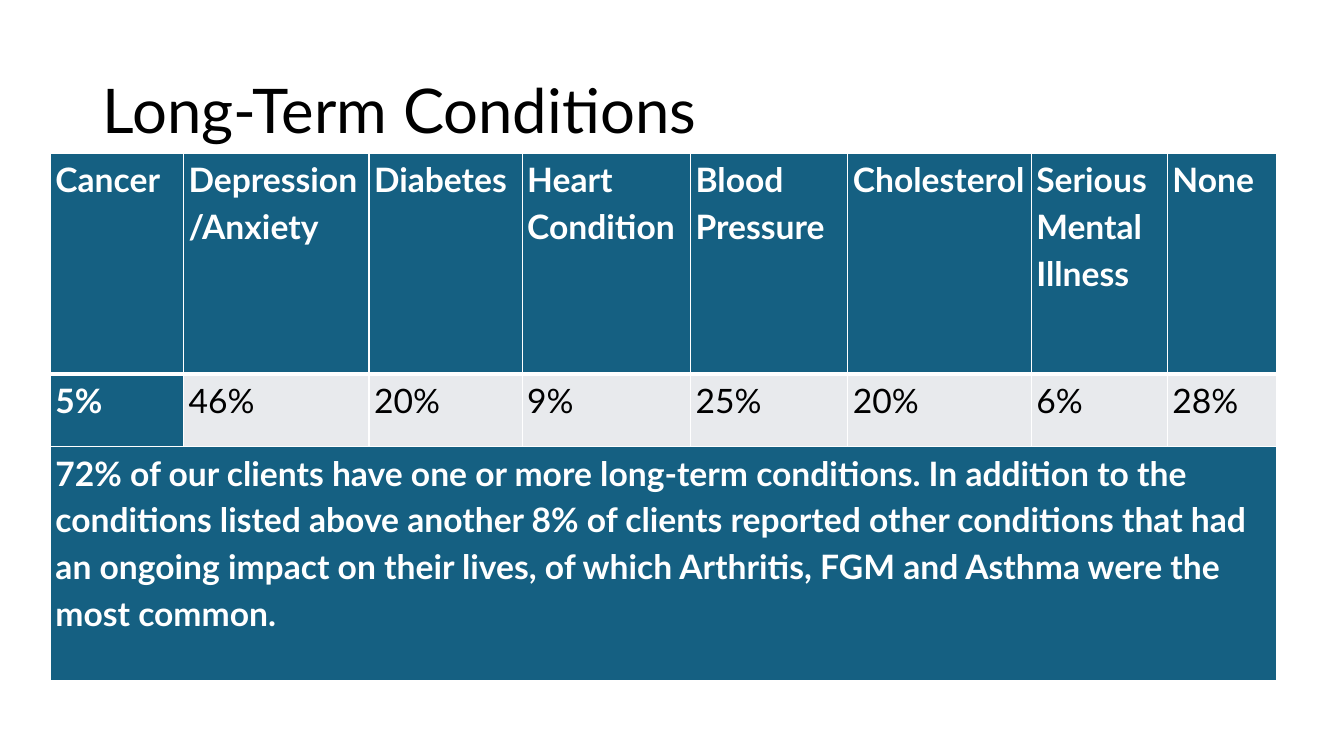
from dataclasses import dataclass

from lxml.etree import SubElement
from pptx import Presentation
from pptx.dml.color import RGBColor
from pptx.enum.text import MSO_ANCHOR, PP_ALIGN
from pptx.oxml.ns import qn
from pptx.table import Table, _Cell
from pptx.text.text import TextFrame
from pptx.util import Pt

SCALE = 9144  # EMU in one px, at 100 px to the inch


@dataclass(frozen=True)
class Theme:
    face: str = "Lato"
    blue: str = "156082"
    grey: str = "E8EAED"
    white: str = "FFFFFF"
    black: str = "000000"
    head: int = 44
    body: int = 24
    thin: int = 1
    thick: int = 3


@dataclass(frozen=True)
class Style:
    size: int
    color: str
    bold: bool
    lines: float
    after: int = 0


@dataclass(frozen=True)
class Item:
    label: str
    share: str
    width: int


THEME = Theme()
TITLE = Style(THEME.head, THEME.black, False, 0.9)
STRONG = Style(THEME.body, THEME.white, True, 1.16, 8)
PLAIN = Style(THEME.body, THEME.black, False, 1.16, 8)

ITEMS = [
    Item("Cancer", "5%", 132),
    Item("Depression/Anxiety", "46%", 184),
    Item("Diabetes", "20%", 152),
    Item("Heart Condition", "9%", 167),
    Item("Blood Pressure", "25%", 156),
    Item("Cholesterol", "20%", 182),
    Item("Serious Mental Illness", "6%", 135),
    Item("None", "28%", 108),
]
ROWS = [219, 72, 232]
NOTE = (
    "72% of our clients have one or more long-term conditions. In addition to the "
    "conditions listed above another 8% of clients reported other conditions that had "
    "an ongoing impact on their lives, of which Arthritis, FGM and Asthma were the "
    "most common."
)


def px(count: int) -> int:
    return count * SCALE


def apply(target: object, values: dict[str, object]) -> None:
    for name, value in values.items():
        setattr(target, name, value)


def write(frame: TextFrame, text: str, style: Style) -> None:
    para = frame.paragraphs[0]
    apply(para, {
        "alignment": PP_ALIGN.LEFT,
        "line_spacing": style.lines,
        "space_before": Pt(0),
        "space_after": Pt(style.after),
    })
    run = para.add_run()
    run.text = text
    apply(run.font, {"name": THEME.face, "size": Pt(style.size), "bold": style.bold})
    run.font.color.rgb = RGBColor.from_string(style.color)


def edge(cell: _Cell, top: int, bottom: int) -> None:
    """Draw the four white borders; call before the fill, which must follow them."""
    props = cell._tc.get_or_add_tcPr()
    sides = {"L": THEME.thin, "R": THEME.thin, "T": top, "B": bottom}
    for side, width in sides.items():
        line = SubElement(props, qn(f"a:ln{side}"), w=str(Pt(width)))
        fill = SubElement(line, qn("a:solidFill"))
        SubElement(fill, qn("a:srgbClr"), val=THEME.white)


def paint(table: Table, row: int, col: int) -> None:
    cell = table.cell(row, col)
    apply(cell, {
        "margin_left": px(5), "margin_right": px(5),
        "margin_top": 0, "margin_bottom": 0,
        "vertical_anchor": MSO_ANCHOR.TOP,
    })
    edge(cell,
         THEME.thick if row == 1 else THEME.thin,
         THEME.thick if row == 0 else THEME.thin)
    plain = row == 1 and col > 0
    cell.fill.solid()
    cell.fill.fore_color.rgb = RGBColor.from_string(THEME.grey if plain else THEME.blue)
    texts = [ITEMS[col].label, ITEMS[col].share, NOTE]
    if not cell.is_spanned:
        write(cell.text_frame, texts[row], PLAIN if plain else STRONG)


def main() -> None:
    deck = Presentation()
    apply(deck, {"slide_width": px(1333), "slide_height": px(750)})
    slide = deck.slides.add_slide(deck.slide_layouts[5])

    title = slide.shapes.title
    apply(title, {"left": px(92), "top": px(40), "width": px(1150), "height": px(145)})
    apply(title.text_frame, {"word_wrap": True, "vertical_anchor": MSO_ANCHOR.MIDDLE})
    write(title.text_frame, "Long-Term Conditions", TITLE)

    width = sum(item.width for item in ITEMS)
    table = slide.shapes.add_table(
        len(ROWS), len(ITEMS), px(50), px(152), px(width), px(sum(ROWS))
    ).table
    for col, item in zip(table.columns, ITEMS):
        col.width = px(item.width)
    for row, height in zip(table.rows, ROWS):
        row.height = px(height)
    last = len(ROWS) - 1
    table.cell(last, 0).merge(table.cell(last, len(ITEMS) - 1))
    for row in range(len(ROWS)):
        for col in range(len(ITEMS)):
            paint(table, row, col)

    deck.save("out.pptx")


if __name__ == "__main__":
    main()
